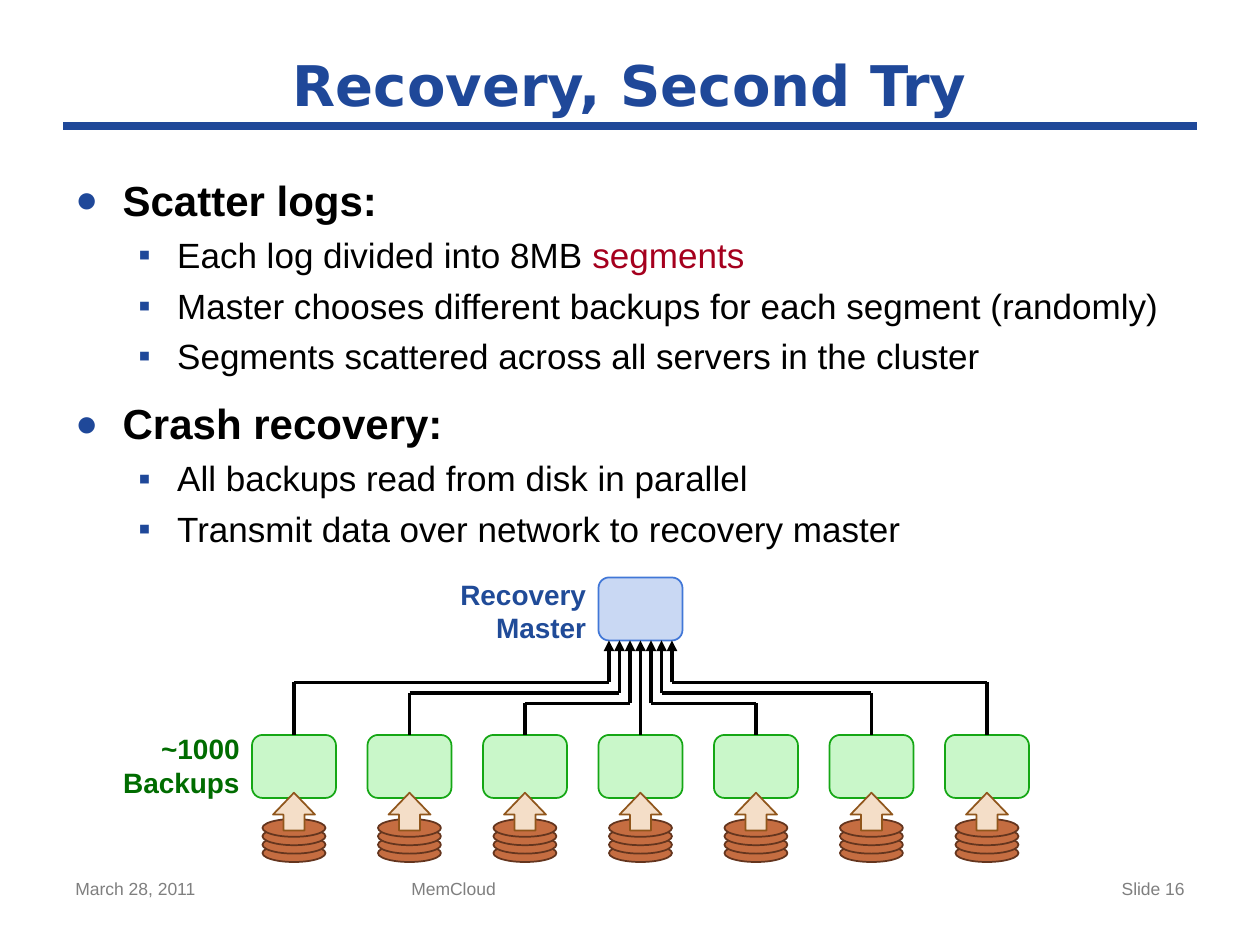
from lxml import etree
from pptx import Presentation
from pptx.dml.color import RGBColor
from pptx.enum.shapes import MSO_CONNECTOR, MSO_SHAPE
from pptx.enum.text import MSO_ANCHOR, PP_ALIGN
from pptx.oxml.ns import qn
from pptx.util import Emu, Pt

LINE = MSO_CONNECTOR.STRAIGHT
OVAL = MSO_SHAPE.OVAL
ROUNDED = MSO_SHAPE.ROUNDED_RECTANGLE
UP_ARROW = MSO_SHAPE.UP_ARROW
MIDDLE = MSO_ANCHOR.MIDDLE
LEFT, CENTER, RIGHT = PP_ALIGN.LEFT, PP_ALIGN.CENTER, PP_ALIGN.RIGHT

PX = 7620
COLORS = {
    "title": "1F4899", "text": "000000", "accent": "A5001E", "footer": "7F7F7F",
    "master_fill": "C9D8F3", "master_line": "4177D7", "master_text": "204B98",
    "backup_fill": "C9F7C9", "backup_line": "15A715", "backup_text": "006C00",
    "disk_fill": "C56D41", "disk_line": "64351E",
    "read_fill": "F4DEC8", "read_line": "90561C",
}
HEAD = {"size": 24, "bold": True}
ITEM = {"size": 20}
LEVELS = [
    {"format": HEAD, "bullet": "●", "scale": 90, "margin": 45, "indent": 45, "before": 12},
    {"format": ITEM, "bullet": "▪", "scale": 100, "margin": 97, "indent": 37, "before": 5},
]
BODY = [
    (0, [("Scatter logs:", "text")]),
    (1, [("Each log divided into 8MB ", "text"), ("segments", "accent")]),
    (1, [("Master chooses different backups for each segment (randomly)", "text")]),
    (1, [("Segments scattered across all servers in the cluster", "text")]),
    (0, [("Crash recovery:", "text")]),
    (1, [("All backups read from disk in parallel", "text")]),
    (1, [("Transmit data over network to recovery master", "text")]),
]


def px(*values):
    return [Emu(v * PX) for v in values]


class Deck:
    font = "Arial"

    def __init__(self, width, height):
        self.prs = Presentation()
        self.prs.slide_width, self.prs.slide_height = px(width, height)
        self.s = self.prs.slides.add_slide(self.prs.slide_layouts[5])

    def color(self, name):
        return RGBColor.from_string(COLORS[name])

    def format(self, r, color, **values):
        values = {"name": self.font, "bold": False, **values}
        values["size"] = Pt(values["size"])
        for key, value in values.items():
            setattr(r.font, key, value)
        r.font.color.rgb = self.color(color)

    def title(self, text, box):
        sp = self.s.shapes.title
        sp.left, sp.top, sp.width, sp.height = px(*box)
        tf = sp.text_frame
        tf.text = text
        tf.vertical_anchor = MIDDLE
        p = tf.paragraphs[0]
        p.alignment = CENTER
        self.format(p.runs[0], "title", name="DejaVu Sans", size=32, bold=True)

    def text(self, text, box, color, align=LEFT, wrap=True, **values):
        tf = self.s.shapes.add_textbox(*px(*box)).text_frame
        tf.word_wrap = wrap
        tf.text = text
        p = tf.paragraphs[0]
        p.alignment = align
        for r in p.runs:
            self.format(r, color, **values)

    def bullets(self, rows, box):
        tf = self.s.shapes.add_textbox(*px(*box)).text_frame
        tf.word_wrap = True
        for i, (level, runs) in enumerate(rows):
            style = LEVELS[level]
            p = tf.add_paragraph() if i else tf.paragraphs[0]
            p.level = level
            p.space_before = Pt(style["before"])
            self.bullet(p, style)
            for text, color in runs:
                r = p.add_run()
                r.text = text
                self.format(r, color, **style["format"])

    def bullet(self, p, style):
        pPr = p._p.get_or_add_pPr()
        pPr.set("marL", str(style["margin"] * PX))
        pPr.set("indent", str(-style["indent"] * PX))
        buClr = etree.SubElement(pPr, qn("a:buClr"))
        etree.SubElement(buClr, qn("a:srgbClr"), val=COLORS["title"])
        etree.SubElement(pPr, qn("a:buSzPct"), val=str(style["scale"] * 1000))
        etree.SubElement(pPr, qn("a:buFont"), typeface=self.font)
        etree.SubElement(pPr, qn("a:buChar"), char=style["bullet"])

    def shape(self, kind, box, name, adjust=(), group=None):
        sp = (group or self.s).shapes.add_shape(kind, *px(*box))
        sp.shadow.inherit = False
        sp.fill.solid()
        sp.fill.fore_color.rgb = self.color(f"{name}_fill")
        sp.line.color.rgb = self.color(f"{name}_line")
        sp.line.width = Pt(1)
        for i, value in enumerate(adjust):
            sp.adjustments[i] = value

    def line(self, x1, y1, x2, y2, color="text", width=2, arrow=False):
        sp = self.s.shapes.add_connector(LINE, *px(x1, y1, x2, y2))
        sp.line.color.rgb = self.color(color)
        sp.line.width = Pt(width)
        if arrow:
            etree.SubElement(sp.line._get_or_add_ln(), qn("a:tailEnd"), type="triangle")
        etree.SubElement(sp._element.spPr, qn("a:effectLst"))

    def backup(self, x, y):
        group = self.s.shapes.add_group_shape()
        for i in reversed(range(4)):
            self.shape(OVAL, (x + 10, y + 80 + 8 * i, 60, 17), "disk", group=group)
        self.shape(ROUNDED, (x, y, 80, 60), "backup", group=group)
        self.shape(UP_ARROW, (x + 20, y + 55, 40, 36), "read", (0.5, 0.58), group)

    def route(self, start, bend, end):
        (x1, y1), (x2, y2) = start, end
        if x1 != x2:
            self.line(x1, y1, x1, bend)
            self.line(x1, bend, x2, bend)
            y1 = bend
        self.line(x2, y1, x2, y2, arrow=True)


def main():
    deck = Deck(1200, 900)
    deck.line(60, 120, 1140, 120, "title", 4.5)
    deck.title("Recovery, Second Try", (60, 40, 1080, 80))
    deck.bullets(BODY, (60, 160, 1080, 400))

    for text, x, width, align in [
        ("March 28, 2011", 60, 280, LEFT),
        ("MemCloud", 380, 450, LEFT),
        ("Slide 16", 860, 280, RIGHT),
    ]:
        deck.text(text, (x, 830, width, 52), "footer", align, size=10)

    for text, box, color in [
        ("Recovery\vMaster", (425, 544, 145, 77), "master_text"),
        ("~1000\vBackups", (104, 691, 136, 77), "backup_text"),
    ]:
        deck.text(text, box, color, RIGHT, wrap=False, size=16, bold=True)

    deck.shape(ROUNDED, (570, 550, 80, 60), "master")
    for offset in range(-3, 4):
        center = 610 + 110 * offset
        deck.backup(center - 40, 700)
        bend = 680 - 10 * abs(offset)
        deck.route((center, 700), bend, (610 + 10 * offset, 610))

    deck.prs.save("out.pptx")


if __name__ == "__main__":
    main()
